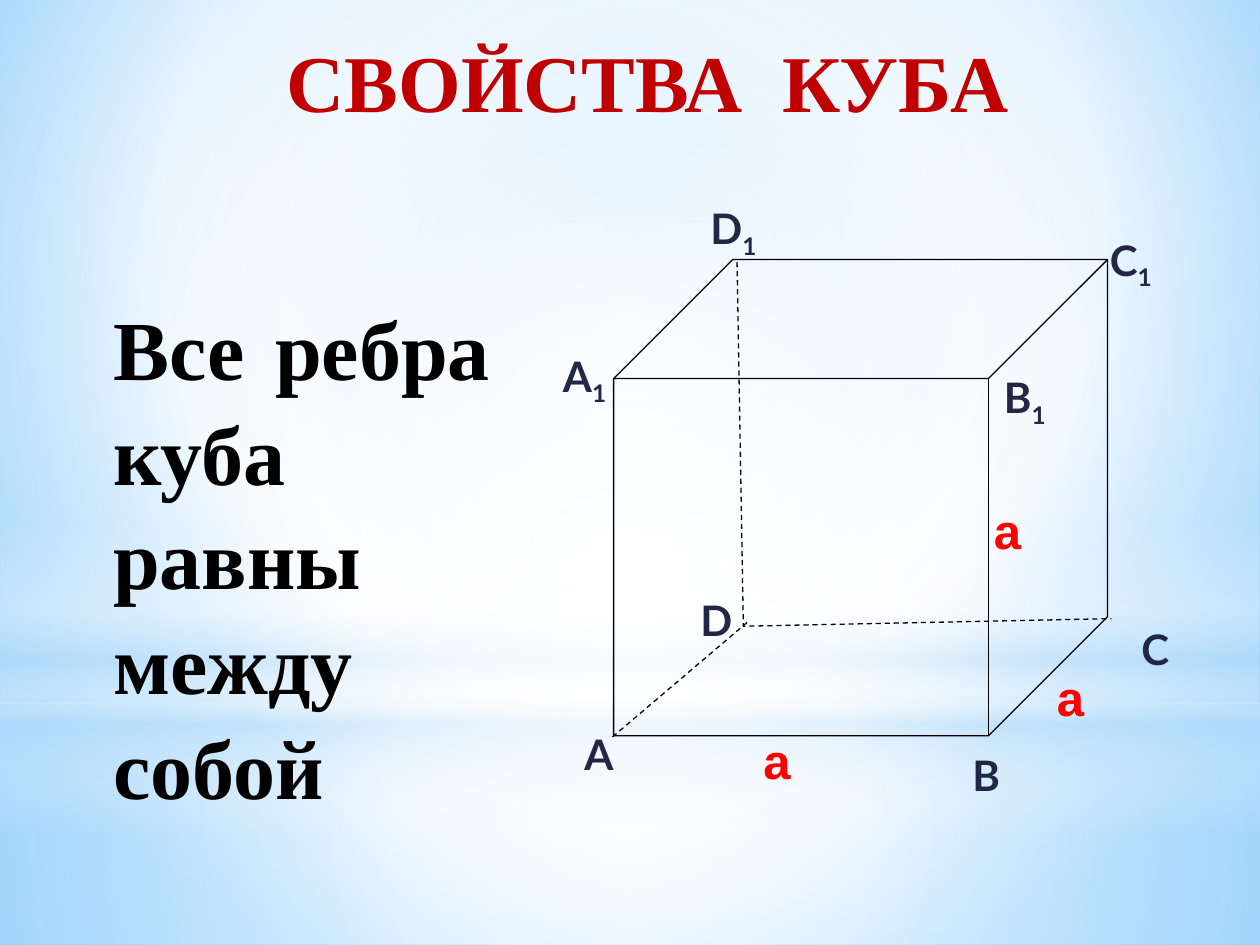
from dataclasses import dataclass

import pptx
import pptx.dml.color
import pptx.enum.dml
import pptx.enum.shapes
import pptx.enum.text
import pptx.oxml
import pptx.oxml.ns
import pptx.util

RGB = pptx.dml.color.RGBColor
KIND = pptx.enum.shapes.MSO_SHAPE
ALIGN = pptx.enum.text.PP_ALIGN
qn = pptx.oxml.ns.qn

BLACK = RGB(0x00, 0x00, 0x00)
WHITE = RGB(0xFF, 0xFF, 0xFF)
NAVY = RGB(0x21, 0x27, 0x45)
RED = RGB(0xFF, 0x00, 0x00)
DARK_RED = RGB(0xC0, 0x00, 0x00)
PALE = RGB(0xB4, 0xDC, 0xFA)
SKY = RGB(0x9E, 0xD5, 0xFF)
BLUE = RGB(0x5B, 0xB9, 0xFF)

# The slide is a grid of 100 columns by 75 rows
COLS, ROWS = 100, 75
CELL = pptx.util.Inches(0.1)
MID = (50, 50, 50, 50)


@dataclass
class Box:
    col: float
    row: float
    wide: float
    high: float

    def emu(self) -> list[int]:
        return [round(n * CELL) for n in (self.col, self.row, self.wide, self.high)]


@dataclass
class Stop:
    pos: int
    color: RGB
    alpha: int = 100


@dataclass
class Layer:
    kind: KIND
    box: Box
    stops: list[Stop]
    focus: tuple | None = MID


@dataclass
class Style:
    font: str
    size: float
    color: RGB


@dataclass
class Label:
    text: str
    col: float
    row: float
    sub: str = ""


HEAD = Style("Times New Roman", 46, DARK_RED)
BODY = Style("Times New Roman", 48, BLACK)
NAME = Style("Lato", 24, NAVY)
EDGE = Style("Arial", 28, RED)

LAYERS = [
    Layer(KIND.RECTANGLE, Box(0, 55.8, COLS, 19.2),
          [Stop(0, WHITE, 91), Stop(37, WHITE, 76), Stop(100, PALE, 79)]),
    Layer(KIND.RECTANGLE, Box(0, 0, COLS, 55.8),
          [Stop(0, WHITE, 89), Stop(48, WHITE, 62), Stop(100, PALE, 79)]),
    Layer(KIND.RECTANGLE, Box(0, 41.2, COLS, 25),
          [Stop(0, WHITE, 0), Stop(29, WHITE, 30), Stop(45, PALE, 40),
           Stop(55, WHITE, 26), Stop(65, PALE, 60), Stop(100, WHITE, 0)], None),
    Layer(KIND.OVAL, Box(0, 17.5, COLS, 55.8), [Stop(0, WHITE), Stop(56, WHITE, 0)]),
]

CUBE = Box(48.7, 20.6, 39.2, 37.8)
HIDDEN = [
    [(58.5, 20.8), (59, 49.7), (88.2, 49.1)],
    [(59.3, 49.4), (48.6, 58.5)],
]
NAMES = [
    Label("D", 54.6, 46.7), Label("А", 45.4, 57.3),
    Label("В", 76.2, 59), Label("С", 89.6, 49),
    Label("А", 43.7, 27.3, "1"), Label("D", 55.4, 15.6, "1"),
    Label("С", 87.1, 18.1, "1"), Label("В", 78.7, 29, "1"),
]
EDGES = [Label("а", 59.6, 57.5), Label("а", 77.9, 39.2), Label("а", 82.9, 52.5)]


def blend(part, stops: list[Stop], focus: tuple | None) -> None:
    """Swap a solid fill for a gradient, circular unless focus is None."""
    marks = "".join(
        f'<a:gs pos="{s.pos * 1000}"><a:srgbClr val="{s.color}">'
        f'<a:alpha val="{s.alpha * 1000}"/></a:srgbClr></a:gs>' for s in stops)
    if focus:
        sides = " ".join(f'{k}="{v * 1000}"' for k, v in zip("ltrb", focus))
        way = f'<a:path path="circle"><a:fillToRect {sides}/></a:path>'
    else:
        way = '<a:lin ang="5400000" scaled="0"/>'
    grad = pptx.oxml.parse_xml(
        f'<a:gradFill {pptx.oxml.ns.nsdecls("a")} rotWithShape="1">'
        f"<a:gsLst>{marks}</a:gsLst>{way}</a:gradFill>")
    part.replace(part.find(qn("a:solidFill")), grad)


def add_layer(slide, layer: Layer) -> None:
    shape = slide.shapes.add_shape(layer.kind, *layer.box.emu())
    shape.shadow.inherit = False
    shape.line.fill.background()
    shape.fill.solid()
    blend(shape._element.spPr, layer.stops, layer.focus)


def outline(shape, dash: bool = False) -> None:
    shape.shadow.inherit = False
    shape.fill.background()
    shape.line.color.rgb = BLACK
    shape.line.width = pptx.util.Pt(0.75)
    if dash:
        shape.line.dash_style = pptx.enum.dml.MSO_LINE.DASH


def add_run(para, text: str, style: Style):
    run = para.add_run()
    run.text = text
    run.font.name = style.font
    run.font.size = pptx.util.Pt(style.size)
    run.font.bold = True
    run.font.color.rgb = style.color
    return run


def add_box(slide, box: Box, align: ALIGN = ALIGN.LEFT, wrap: bool = True):
    frame = slide.shapes.add_textbox(*box.emu()).text_frame
    frame.word_wrap = wrap
    frame.paragraphs[0].alignment = align
    return frame


def add_label(slide, label: Label, style: Style, wide: float, high: float,
              wrap: bool = True) -> None:
    frame = add_box(slide, Box(label.col, label.row, wide, high), wrap=wrap)
    frame.auto_size = pptx.enum.text.MSO_AUTO_SIZE.SHAPE_TO_FIT_TEXT
    para = frame.paragraphs[0]
    add_run(para, label.text, style)
    if label.sub:
        run = add_run(para, label.sub, style)
        run._r.get_or_add_rPr().set("baseline", "-25000")


def main() -> None:
    deck = pptx.Presentation()
    deck.slide_width, deck.slide_height = COLS * CELL, ROWS * CELL
    slide = deck.slides.add_slide(deck.slide_layouts[6])

    # Sky backdrop
    slide.background.fill.solid()
    blend(slide._element.find(".//" + qn("p:bgPr")),
          [Stop(0, SKY), Stop(60, WHITE), Stop(100, BLUE)], (20, 10, 20, 60))
    for layer in LAYERS:
        add_layer(slide, layer)

    # Statement
    para = add_box(slide, Box(5.5, 22.7, 34.4, 35.9), ALIGN.JUSTIFY).paragraphs[0]
    para._p.get_or_add_pPr().set("marL", str(pptx.util.Inches(0.25)))
    para.line_spacing = 1.04
    add_run(para, "Все ребра куба равны между собой", BODY)

    # Title, with one widened gap between its words
    frame = add_box(slide, Box(11.4, 1.3, 80, 12.5), ALIGN.CENTER)
    frame.margin_top = pptx.util.Inches(0.12)
    para = frame.paragraphs[0]
    add_run(para, "СВОЙСТВА", HEAD)
    gap = add_run(para, " ", HEAD)
    gap._r.get_or_add_rPr().set("spc", "1150")
    add_run(para, "КУБА", HEAD)

    # Hidden edges, drawn in whole EMU
    for edge in HIDDEN:
        first, *rest = [(col * CELL, row * CELL) for col, row in edge]
        pen = slide.shapes.build_freeform(*first)
        pen.add_line_segments(rest, close=False)
        outline(pen.convert_to_shape(), dash=True)

    # Cube with its corner names and edge lengths
    cube = slide.shapes.add_shape(KIND.CUBE, *CUBE.emu())
    cube.adjustments[0] = 0.25
    outline(cube)
    for label in NAMES:
        add_label(slide, label, NAME, 6.7, 5)
    for label in EDGES:
        add_label(slide, label, EDGE, 4.2, 5.7, wrap=False)

    deck.save("out.pptx")


if __name__ == "__main__":
    main()
